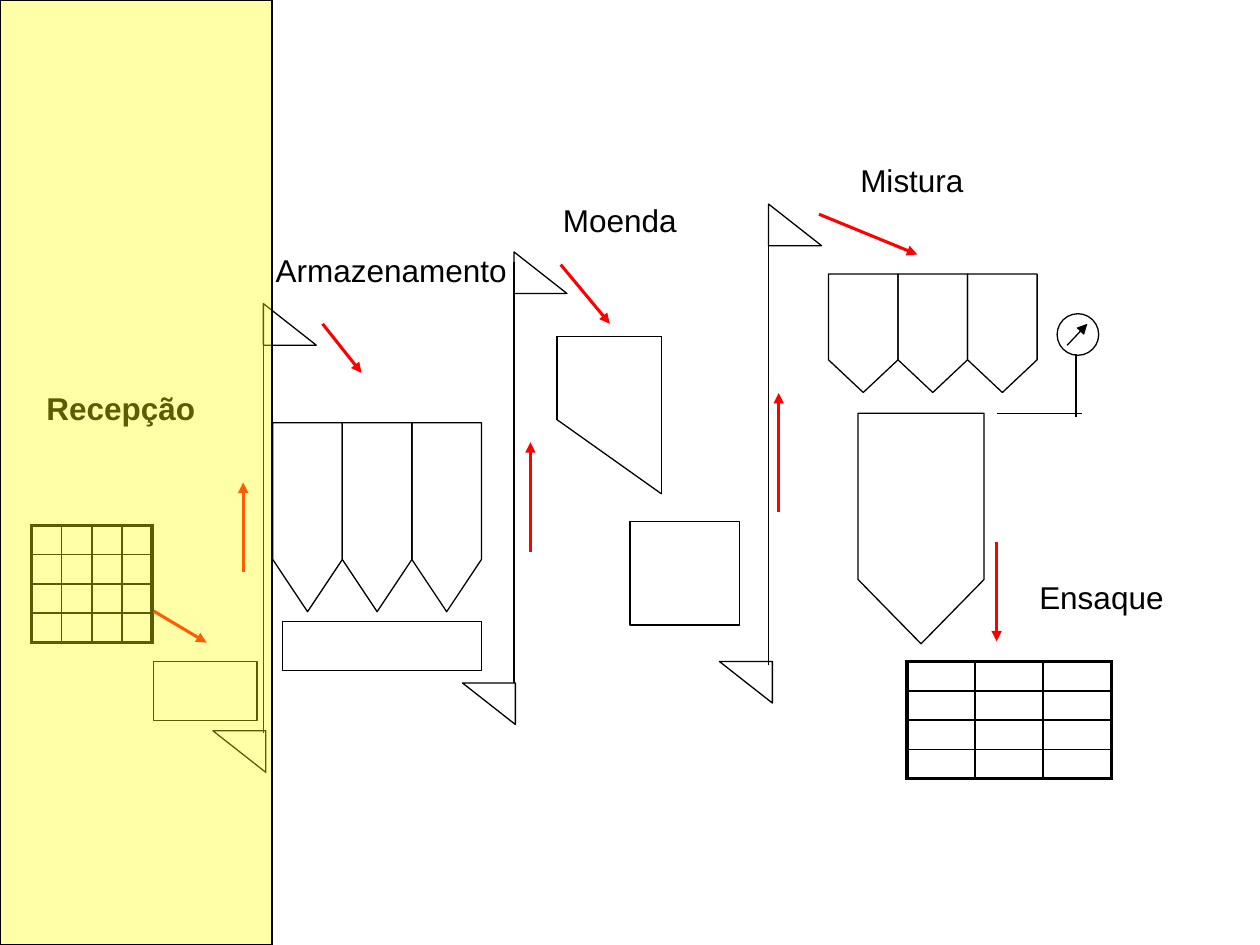
import pptx
import pptx.util
import pptx.dml.color
import pptx.enum.shapes
import pptx.enum.text
import pptx.oxml.ns
from lxml import etree

# The slide is a grid of 100 columns by 75 rows of square cells
COLS, ROWS = 100, 75
CELL = pptx.util.Inches(10) // COLS
COLORS = {"ink": "000000", "flow": "FF0000", "highlight": "FFFF0D"}
THIN, FLOW, INNER, OUTER = 0.75, 1.75, 1, 2.25
SHAPES = pptx.enum.shapes.MSO_SHAPE
qn = pptx.oxml.ns.qn


def grid(*lengths):
    return [pptx.util.Emu(round(n * CELL)) for n in lengths]


def rgb(name):
    return pptx.dml.color.RGBColor.from_string(COLORS[name])


def add_text(s, text, x, y, w=15, h=4, size=18, bold=False, color="ink"):
    tf = s.shapes.add_textbox(*grid(x, y, w, h)).text_frame
    tf.word_wrap = True
    tf.auto_size = pptx.enum.text.MSO_AUTO_SIZE.SHAPE_TO_FIT_TEXT
    r = tf.paragraphs[0].add_run()
    r.text = text
    r.font.name, r.font.size, r.font.bold = "Arial", pptx.util.Pt(size), bold
    r.font.color.rgb = rgb(color)


def add_outline(s, kind, x, y, w, h, rotation=0):
    sp = s.shapes.add_shape(kind, *grid(x, y, w, h))
    sp.shadow.inherit = False
    sp.rotation = rotation
    sp.fill.background()
    sp.line.color.rgb = rgb("ink")
    sp.line.width = pptx.util.Pt(THIN)
    return sp


def add_silo(s, x, y, w, h, point):
    """Bin pointing down: a pentagon arrow turned about its centre."""
    shift = (h - w) / 2
    sp = add_outline(s, SHAPES.PENTAGON, x - shift, y + shift, h, w, 90)
    sp.adjustments[0] = point


def add_line(s, start, end, color="ink", width=THIN, arrow=False):
    straight = pptx.enum.shapes.MSO_CONNECTOR.STRAIGHT
    line = s.shapes.add_connector(straight, *grid(*start, *end))
    line.line.color.rgb = rgb(color)
    line.line.width = pptx.util.Pt(width)
    sp_pr = line._element.spPr
    if arrow:
        etree.SubElement(sp_pr.find(qn("a:ln")), qn("a:tailEnd"), type="triangle")
    etree.SubElement(sp_pr, qn("a:effectLst"))


def add_elevator(s, x, top, bottom, head_y, foot):
    add_line(s, (x, bottom), (x, top))
    add_outline(s, SHAPES.RIGHT_TRIANGLE, x, head_y, 4.2, 3.3)
    add_outline(s, SHAPES.RIGHT_TRIANGLE, *foot, 4.2, 3.3, 180)


def add_border(cell, side, width):
    ln = etree.SubElement(cell._tc.get_or_add_tcPr(), qn(f"a:ln{side}"),
                          w=str(pptx.util.Pt(width)))
    fill = etree.SubElement(ln, qn("a:solidFill"))
    etree.SubElement(fill, qn("a:srgbClr"), val=COLORS["ink"])


def add_grate(s, rows, cols, x, y, w, h):
    """Empty table with a heavy frame and thin inner rules."""
    table = s.shapes.add_table(rows, cols, *grid(x, y, w, h)).table
    table.first_row = table.horz_banding = False
    for i in range(rows):
        for j in range(cols):
            cell = table.cell(i, j)
            on_frame = {"L": j == 0, "R": j == cols - 1,
                        "T": i == 0, "B": i == rows - 1}
            for side, outer in on_frame.items():
                add_border(cell, side, OUTER if outer else INNER)
            cell.fill.background()
            cell.margin_top = cell.margin_bottom = 0
            # Small empty text keeps the rows at their set height
            p = cell.text_frame.paragraphs[0]._p
            etree.SubElement(p, qn("a:endParaRPr"), sz="800")


def add_highlight(s, x, y, w, h, alpha):
    sp = add_outline(s, SHAPES.RECTANGLE, x, y, w, h)
    sp.fill.solid()
    sp.fill.fore_color.rgb = rgb("highlight")
    clr = sp._element.spPr.find(qn("a:solidFill"))[0]
    etree.SubElement(clr, qn("a:alpha"), val=str(alpha * 1000))


def main():
    prs = pptx.Presentation()
    prs.slide_width, prs.slide_height = grid(COLS, ROWS)
    s = prs.slides.add_slide(prs.slide_layouts[6])

    # Reception grate and bagging pallet
    add_grate(s, 4, 4, 2.5, 41.7, 9.2, 9.3)
    add_grate(s, 4, 3, 72, 52.5, 16.2, 9.3)

    # Conveyors and mill
    for box in ((12.2, 52.5, 8.2, 4.7), (22.4, 49.3, 15.8, 3.9), (50, 41.4, 8.7, 8.2)):
        add_outline(s, SHAPES.RECTANGLE, *box)

    # Storage silos, mixing silos and mixer
    for i in range(3):
        add_silo(s, 21.65 + 5.52 * i, 33.55, 5.52, 15, 0.75)
        add_silo(s, 65.75 + 5.52 * i, 21.75, 5.52, 9.4, 0.47)
    add_silo(s, 68.1, 32.8, 10, 18.3, 0.51)

    # Bucket elevators
    add_elevator(s, 20.9, 24.9, 58.2, 24.1, (16.9, 58))
    add_elevator(s, 40.8, 20.8, 54.2, 20, (36.7, 54.2))
    add_elevator(s, 61, 18.6, 52.8, 16.2, (57.1, 52.5))

    # Milling hopper
    hopper = [(44.2, 26.7), (52.5, 26.7), (52.5, 39.2), (44.2, 33.3)]
    for start, end in zip(hopper, hopper[1:] + hopper[:1]):
        add_line(s, start, end)

    # Scale with its dial
    add_line(s, (79.1, 32.8), (85.9, 32.8))
    add_line(s, (85.4, 33.1), (85.4, 28.1))
    add_outline(s, SHAPES.OVAL, 83.9, 24.9, 3.3, 3.3)
    add_line(s, (84.7, 27.4), (86.3, 25.7), arrow=True)

    # Product flow
    flows = [
        ((12.2, 48.5), (16.4, 51)), ((19.3, 45.4), (19.3, 38.3)),
        ((25.6, 25.7), (28.7, 29.6)), ((42.1, 43.8), (42.1, 35.1)),
        ((44.5, 21), (48.4, 25.7)), ((61.8, 40.6), (61.8, 31.2)),
        ((65, 17), (72.8, 20.2)), ((79.1, 43), (79.1, 50.9)),
    ]
    for start, end in flows:
        add_line(s, start, end, "flow", FLOW, arrow=True)

    # Stage names
    add_text(s, "Recepção", 2.7, 30.4, bold=True)
    add_text(s, "Armazenamento", 20.9, 19.4, w=21.3)
    add_text(s, "Moenda", 43.7, 15.5)
    add_text(s, "Mistura", 67.3, 12.3)
    add_text(s, "Ensaque", 81.5, 45.4)

    # Current stage
    add_highlight(s, 0, 0, 21.6, ROWS, alpha=36)

    prs.save("out.pptx")


if __name__ == "__main__":
    main()
